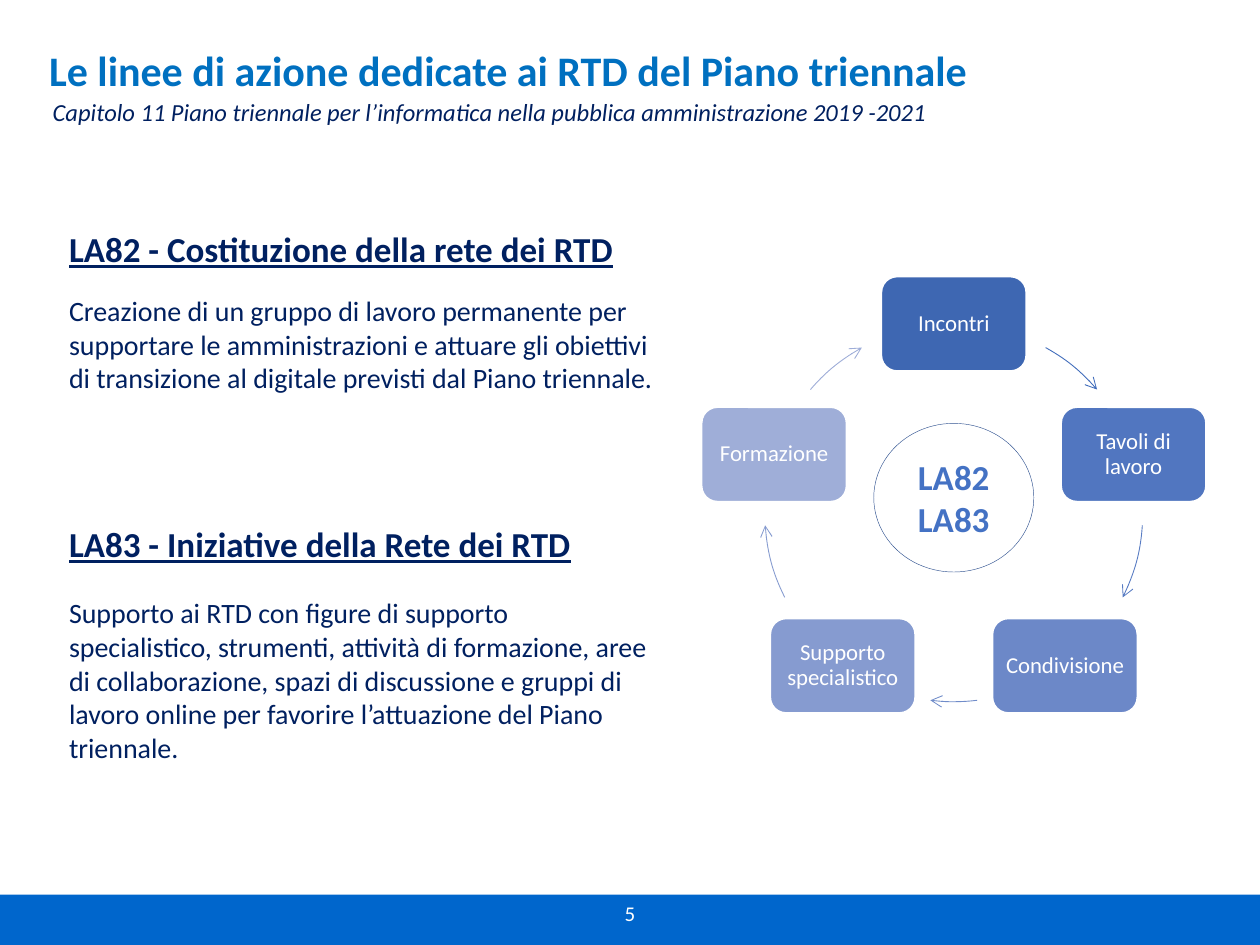
import math

import pptx
import pptx.dml.color
import pptx.enum.shapes
import pptx.enum.text
import pptx.oxml
import pptx.oxml.ns
import pptx.util

Inches, Pt = pptx.util.Inches, pptx.util.Pt
RGBColor = pptx.dml.color.RGBColor
MSO_SHAPE = pptx.enum.shapes.MSO_SHAPE
MSO_ANCHOR = pptx.enum.text.MSO_ANCHOR
MSO_AUTO_SIZE = pptx.enum.text.MSO_AUTO_SIZE
PP_ALIGN = pptx.enum.text.PP_ALIGN

# Colours
WHITE = RGBColor(0xFF, 0xFF, 0xFF)
NAVY = RGBColor(0x00, 0x20, 0x60)
TITLE_BLUE = RGBColor(0x00, 0x70, 0xC0)
BAR_BLUE = RGBColor(0x00, 0x66, 0xCC)
HUB_TEXT = RGBColor(0x44, 0x72, 0xC4)
HUB_LINE = RGBColor(0x32, 0x54, 0x91)

# Content
TITLE = "Le linee di azione dedicate ai RTD del Piano triennale"
SUBTITLE = ("Capitolo 11 Piano triennale per l’informatica nella pubblica "
            "amministrazione 2019 -2021")
PAGE = "5"
# heading, its top and width, body, its top and height
ACTIONS = [
    ("LA82 - Costituzione della rete dei RTD", 1.76, 4.56,
     "Creazione di un gruppo di lavoro permanente per supportare le "
     "amministrazioni e attuare gli obiettivi di transizione al digitale "
     "previsti dal Piano triennale.", 2.28, 1.18),
    ("LA83 - Iniziative della Rete dei RTD", 4.1, 4.22,
     "Supporto ai RTD con figure di supporto specialistico, strumenti, "
     "attività di formazione, aree di collaborazione, spazi di discussione e "
     "gruppi di lavoro online per favorire l’attuazione del Piano triennale.",
     4.68, 1.45),
]
# label, box colour, colour of the arc that follows, arc start and end (degrees)
STEPS = [
    ("Incontri", RGBColor(0x3E, 0x67, 0xB2), RGBColor(0x41, 0x6D, 0xBB), 299.1, 319.3),
    ("Tavoli di lavoro", RGBColor(0x51, 0x76, 0xC0), RGBColor(0x58, 0x7C, 0xC3), 3.8, 26.6),
    ("Condivisione", RGBColor(0x6C, 0x88, 0xC8), RGBColor(0x70, 0x8C, 0xC9), 82.9, 97.1),
    ("Supporto specialistico", RGBColor(0x86, 0x9B, 0xD0), RGBColor(0x87, 0x9C, 0xD0), 153.4, 176.2),
    ("Formazione", RGBColor(0x9F, 0xAE, 0xD8), RGBColor(0x9E, 0xAD, 0xD8), 220.7, 240.9),
]
HUB = ["LA82", "LA83"]

# Cycle geometry
CX, CY, RADIUS = 7.57, 4.07, 1.5
BOX_W, BOX_H = 1.15, 0.75
HUB_W, HUB_H = 1.27, 1.18

prs = pptx.Presentation()
prs.slide_width, prs.slide_height = Inches(10), Inches(7.5)
s = prs.slides.add_slide(prs.slide_layouts[6])


def write(tf, lines, size, color, align=PP_ALIGN.LEFT, spacing=None, **style):
    for i, line in enumerate(lines):
        p = tf.paragraphs[0] if i == 0 else tf.add_paragraph()
        p.alignment = align
        if spacing:
            p.line_spacing = spacing
        r = p.add_run()
        r.text = line
        r.font.name, r.font.size = "Calibri", Pt(size)
        r.font.color.rgb = color
        for name, value in style.items():
            setattr(r.font, name, value)


def add_text(x, y, w, h, text, size, color, wrap=True, **style):
    tf = s.shapes.add_textbox(Inches(x), Inches(y), Inches(w), Inches(h)).text_frame
    tf.word_wrap = wrap
    tf.auto_size = MSO_AUTO_SIZE.SHAPE_TO_FIT_TEXT
    write(tf, [text], size, color, **style)
    return tf


def add_shape(kind, x, y, w, h, fill=None, line=None, width=1):
    sp = s.shapes.add_shape(kind, Inches(x), Inches(y), Inches(w), Inches(h))
    sp.shadow.inherit = False
    if fill is None:
        sp.fill.background()
    else:
        sp.fill.solid()
        sp.fill.fore_color.rgb = fill
    if line is None:
        sp.line.fill.background()
    else:
        sp.line.color.rgb = line
        sp.line.width = Pt(width)
    return sp


def set_margins(tf, side, top):
    tf.margin_left = tf.margin_right = Inches(side)
    tf.margin_top = tf.margin_bottom = Inches(top)


# Footer bar and page number
add_shape(MSO_SHAPE.RECTANGLE, 0, 7.1, 10.02, 0.4, BAR_BLUE)
add_text(0, 7.1, 10, 0.3, PAGE, 12, WHITE, align=PP_ALIGN.CENTER)

# Title and subtitle
tf = add_text(0.32, 0.35, 8.64, 0.46, TITLE, 24, TITLE_BLUE, spacing=0.9, bold=True)
tf.auto_size = MSO_AUTO_SIZE.NONE
tf.vertical_anchor = MSO_ANCHOR.MIDDLE
set_margins(tf, 0.07, 0.04)
add_text(0.32, 0.72, 7.26, 0.34, SUBTITLE, 14, NAVY, wrap=False, italic=True)

# Action lines
for heading, head_y, head_w, body, body_y, body_h in ACTIONS:
    add_text(0.45, head_y, head_w, 0.44, heading, 20, NAVY, wrap=False,
             bold=True, underline=True)
    add_text(0.45, body_y, 4.83, body_h, body, 16, NAVY)

# Cycle of steps, clockwise from the top, each followed by an arc arrow
for i, (label, fill, arc_color, start, end) in enumerate(STEPS):
    angle = math.radians(360 / len(STEPS) * i - 90)
    x = CX + RADIUS * math.cos(angle) - BOX_W / 2
    y = CY + RADIUS * math.sin(angle) - BOX_H / 2
    sp = add_shape(MSO_SHAPE.ROUNDED_RECTANGLE, x, y, BOX_W, BOX_H, fill, WHITE)
    tf = sp.text_frame
    tf.word_wrap = True
    tf.vertical_anchor = MSO_ANCHOR.MIDDLE
    set_margins(tf, 0.05, 0.05)
    write(tf, [label], 13, WHITE, PP_ALIGN.CENTER, 0.9)

    arc = add_shape(MSO_SHAPE.ARC, CX - RADIUS, CY - RADIUS, 2 * RADIUS, 2 * RADIUS,
                    line=arc_color, width=0.5)
    # Angles are stored in 60000ths of a degree, adjustments in 100000ths
    arc.adjustments[0], arc.adjustments[1] = start * 0.6, end * 0.6
    ln = arc.line._get_or_add_ln()
    ln.append(pptx.oxml.parse_xml(
        '<a:tailEnd %s type="arrow"/>' % pptx.oxml.ns.nsdecls("a")))

# Hub
hub = add_shape(MSO_SHAPE.FLOWCHART_CONNECTOR, CX - HUB_W / 2, 3.36, HUB_W, HUB_H,
                WHITE, HUB_LINE, 0.25)
hub.text_frame.word_wrap = True
hub.text_frame.vertical_anchor = MSO_ANCHOR.MIDDLE
write(hub.text_frame, HUB, 20, HUB_TEXT, PP_ALIGN.CENTER, bold=True)

prs.save("out.pptx")
